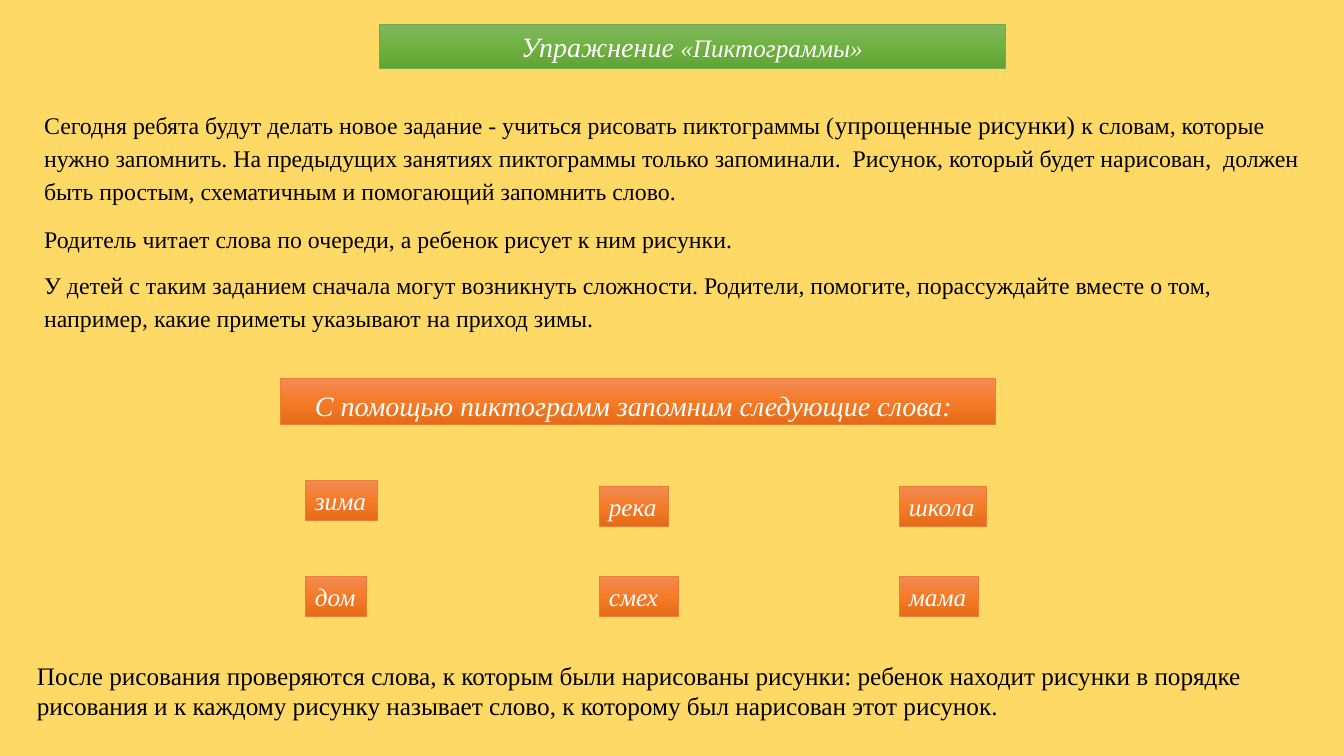
import copy

import pptx
import pptx.dml.color
import pptx.enum.shapes
import pptx.enum.text
import pptx.oxml
import pptx.oxml.ns
import pptx.util

PX = 914400 / 100.8
COLORS = {"background": "FFD966", "text": "000000", "light": "FFFFFF",
          "green": "70AD47", "orange": "ED7D31"}
GRADIENTS = {"green": ("81B861", "6FB242", "62A336"),
             "orange": ("F18C57", "F67B28", "E56C19")}
ALIGN = pptx.enum.text.PP_ALIGN


def px(n):
    return pptx.util.Emu(round(n * PX))


def rgb(value):
    return pptx.dml.color.RGBColor.from_string(value)


class Deck:
    font = "Times New Roman"

    def __init__(self):
        self.prs = pptx.Presentation()
        self.prs.slide_width = px(1344)
        self.prs.slide_height = px(756)
        self.s = self.prs.slides.add_slide(self.prs.slide_layouts[1])
        fill = self.s.background.fill
        fill.solid()
        fill.fore_color.rgb = rgb(COLORS["background"])

    def place(self, sp, box):
        sp.left, sp.top, sp.width, sp.height = map(px, box)
        tf = sp.text_frame
        tf.word_wrap = True
        tf.auto_size = pptx.enum.text.MSO_AUTO_SIZE.NONE
        tf.vertical_anchor = pptx.enum.text.MSO_ANCHOR.TOP
        return tf

    def paint(self, sp, color):
        """Give the shape a three-stop vertical gradient and a thin outline."""
        sp.fill.gradient()
        sp.fill.gradient_angle = 270
        stops = sp._element.spPr.find(".//" + pptx.oxml.ns.qn("a:gsLst"))
        stops.insert(1, copy.deepcopy(stops[0]))
        for stop, value, position in zip(sp.fill.gradient_stops, GRADIENTS[color], (0, 0.5, 1)):
            stop.color.rgb = rgb(value)
            stop.position = position
        sp.line.color.rgb = rgb(COLORS[color])
        sp.line.width = pptx.util.Pt(0.5)

    def add_text(self, p, runs, color, italic=False, align=ALIGN.LEFT, spacing=1.0, before=0, indent=0):
        p.alignment = align
        p.line_spacing = spacing
        p.space_before = pptx.util.Pt(before)
        pPr = p._p.get_or_add_pPr()
        pPr.set("marL", "0")
        pPr.set("indent", str(px(indent)))
        pPr.append(pptx.oxml.parse_xml(f"<a:buNone {pptx.oxml.ns.nsdecls('a')}/>"))
        for text, size in runs:
            r = p.add_run()
            r.text = text
            r.font.name = self.font
            r.font.size = pptx.util.Pt(size)
            r.font.italic = italic
            r.font.color.rgb = rgb(COLORS[color])

    def title(self, box, runs):
        sp = self.s.shapes.title
        tf = self.place(sp, box)
        self.paint(sp, "green")
        self.add_text(tf.paragraphs[0], runs, "light", italic=True, align=ALIGN.CENTER)

    def body(self, box, lines):
        tf = self.place(self.s.placeholders[1], box)
        for i, (before, runs) in enumerate(lines):
            p = tf.add_paragraph() if i else tf.paragraphs[0]
            self.add_text(p, runs, "text", align=ALIGN.JUSTIFY, spacing=1.15, before=before, indent=25)

    def label(self, box, text, size, **style):
        sp = self.s.shapes.add_shape(pptx.enum.shapes.MSO_SHAPE.RECTANGLE, *map(px, box))
        sp.shadow.inherit = False
        tf = self.place(sp, box)
        tf.margin_right = 0
        self.paint(sp, "orange")
        self.add_text(tf.paragraphs[0], [(text, size)], "light", italic=True, **style)

    def note(self, box, text, size):
        tf = self.place(self.s.shapes.add_textbox(*map(px, box)), box)
        self.add_text(tf.paragraphs[0], [(text, size)], "text")


def main():
    deck = Deck()
    deck.title((379, 24, 626, 44), [("Упражнение", 20), (" «Пиктограммы»", 18)])
    deck.body((9, 100, 1309, 238), [
        (0, [("Сегодня ребята будут делать новое задание - учиться рисовать пиктограммы (", 17),
             ("упрощенные рисунки)", 18), (" к словам, которые", 17)]),
        (0, [("нужно запомнить. На предыдущих занятиях пиктограммы только запоминали.  "
              "Рисунок, который будет нарисован,  должен", 17)]),
        (0, [("быть простым, схематичным и помогающий запомнить слово.", 17)]),
        (10.6, [("Родитель читает слова по очереди, а ребенок рисует к ним рисунки.", 17)]),
        (9.3, [("У детей с таким заданием сначала могут возникнуть сложности. "
                "Родители, помогите, порассуждайте вместе о том,", 17)]),
        (0, [("например, какие приметы указывают на приход зимы.", 17)]),
    ])
    deck.label((280, 378, 715, 46), "С помощью пиктограмм запомним следующие слова:", 20,
               align=ALIGN.JUSTIFY, spacing=1.15, indent=25)
    columns = (305, 599, 899)
    rows = [
        [("зима", 480, 72), ("река", 486, 69), ("школа", 486, 87)],
        [("дом", 576, 61), ("смех", 576, 79), ("мама", 576, 79)],
    ]
    for row in rows:
        for left, (word, top, width) in zip(columns, row):
            deck.label((left, top, width, 40), word, 18)
    deck.note((27, 655, 1292, 72),
              "После рисования проверяются слова, к которым были нарисованы рисунки: "
              "ребенок находит рисунки в порядке рисования и к каждому рисунку называет слово, "
              "к которому был нарисован этот рисунок.", 18)
    deck.prs.save("out.pptx")


if __name__ == "__main__":
    main()
